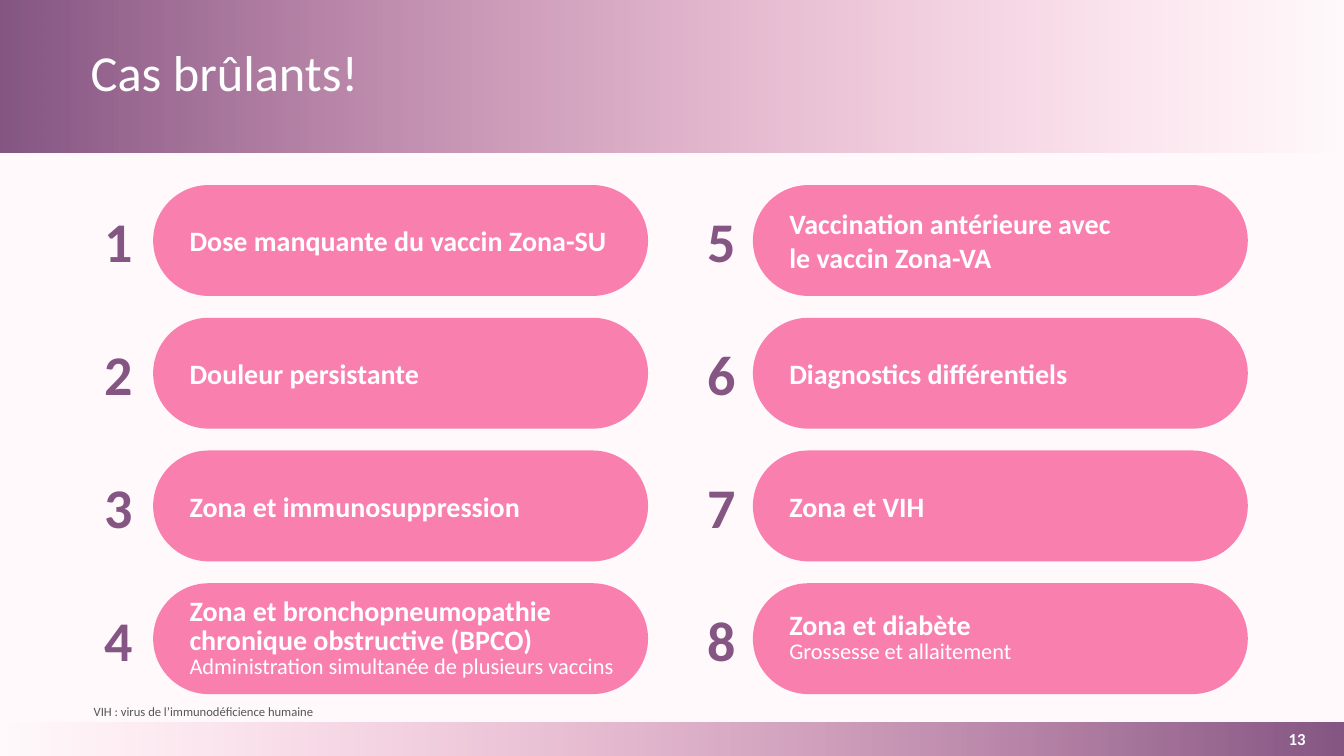
from dataclasses import dataclass
from typing import Any

import pptx
import pptx.dml.color
import pptx.enum.shapes
import pptx.enum.text
import pptx.oxml.ns
import pptx.util
from lxml import etree

Pt = pptx.util.Pt
RGBColor = pptx.dml.color.RGBColor
Align = pptx.enum.text.PP_ALIGN
Anchor = pptx.enum.text.MSO_ANCHOR
Shape = pptx.enum.shapes.MSO_SHAPE

PLUM = RGBColor(0x85, 0x56, 0x83)
PINK = RGBColor(0xF8, 0x7F, 0xAE)
PALE = RGBColor(0xFF, 0xF9, 0xFB)
WHITE = RGBColor(0xFF, 0xFF, 0xFF)
GREY = RGBColor(0x55, 0x55, 0x55)

WIDE, HIGH = 960, 540
TOP, STEP = 132.2, 94.8
CARD_W, CARD_H = 353.5, 79.2
NUM_W, NUM_H = 35.3, 55.4
CARD_X = (109.4, 537.8)
NUM_X = (67, 497.5)
ROWS = 4


@dataclass
class Box:
    left: float
    top: float
    width: float
    height: float

    def size(self) -> list[int]:
        return [Pt(n) for n in (self.left, self.top, self.width, self.height)]


@dataclass
class Line:
    text: str
    size: float
    color: RGBColor = WHITE
    bold: bool = False
    align: Any = Align.LEFT
    space: float = 1.0


@dataclass
class Case:
    head: str
    note: str = ""


CASES = [
    Case("Dose manquante du vaccin Zona-SU"),
    Case("Douleur persistante"),
    Case("Zona et immunosuppression"),
    Case("Zona et bronchopneumopathie\nchronique obstructive (BPCO)",
         "Administration simultanée de plusieurs vaccins"),
    Case("Vaccination antérieure avec\nle vaccin Zona-VA"),
    Case("Diagnostics différentiels"),
    Case("Zona et VIH"),
    Case("Zona et diabète", "Grossesse et allaitement"),
]


def write(frame: Any, lines: list[Line], **style: Any) -> None:
    base = {"word_wrap": True, "vertical_anchor": Anchor.MIDDLE}
    for key, value in (base | style).items():
        setattr(frame, key, value)
    for i, line in enumerate(lines):
        para = frame.add_paragraph() if i else frame.paragraphs[0]
        para.text = line.text
        para.alignment = line.align
        para.line_spacing = line.space
        for run in para.runs:
            look = {"name": "Calibri", "size": Pt(line.size), "bold": line.bold}
            for key, value in look.items():
                setattr(run.font, key, value)
            run.font.color.rgb = line.color


def label(slide: Any, box: Box, line: Line, **style: Any) -> None:
    write(slide.shapes.add_textbox(*box.size()).text_frame, [line], **style)


def plain(slide: Any, kind: Any, box: Box) -> Any:
    shape = slide.shapes.add_shape(kind, *box.size())
    shape.shadow.inherit = False
    shape.line.fill.background()
    return shape


def band(slide: Any, box: Box, angle: int) -> None:
    fill = plain(slide, Shape.RECTANGLE, box).fill
    fill.gradient()
    fill.gradient_angle = angle
    for stop, color in zip(fill.gradient_stops, (PLUM, PINK)):
        stop.color.rgb = color
    tag = pptx.oxml.ns.qn
    last = fill._xPr.findall(".//" + tag("a:srgbClr"))[-1]
    etree.SubElement(last, tag("a:alpha"), val="0")


def card(slide: Any, index: int, case: Case) -> None:
    col, row = divmod(index, ROWS)
    top = TOP + row * STEP
    pill = plain(slide, Shape.ROUNDED_RECTANGLE,
                 Box(CARD_X[col], top, CARD_W, CARD_H))
    pill.adjustments[0] = 0.5
    pill.fill.solid()
    pill.fill.fore_color.rgb = PINK
    space = 0.85 if case.note else 1.0
    lines = [Line(case.head, 20, bold=True, space=space)]
    if case.note:
        lines.append(Line(case.note, 16, space=space))
    write(pill.text_frame, lines, margin_left=Pt(14.4))
    label(slide, Box(NUM_X[col], top + (CARD_H - NUM_H) / 2, NUM_W, NUM_H),
          Line(str(index + 1), 40, PLUM, True, Align.CENTER), word_wrap=False)


def main() -> None:
    deck = pptx.Presentation()
    deck.slide_width, deck.slide_height = Pt(WIDE), Pt(HIGH)
    slide = deck.slides.add_slide(deck.slide_layouts[5])
    back = slide.background.fill
    back.solid()
    back.fore_color.rgb = PALE

    band(slide, Box(0, 516, WIDE, 24), 180)
    band(slide, Box(0, 0, WIDE, 108.7), 0)

    title = slide.shapes.title
    place = Box(57.6, 13, 825.8, 82).size()
    for key, value in zip(("left", "top", "width", "height"), place):
        setattr(title, key, value)
    write(title.text_frame, [Line("Cas brûlants!", 36, space=0.9)])
    slide.shapes._spTree.append(title._element)

    sides = ("left", "top", "right", "bottom")
    label(slide, Box(893, 516, 67, 24),
          Line("13", 12, bold=True, align=Align.CENTER),
          **{"margin_" + side: 0 for side in sides})
    for index, case in enumerate(CASES):
        card(slide, index, case)
    label(slide, Box(59.8, 468.7, 840, 48.2),
          Line("VIH : virus de l’immunodéficience humaine", 9, GREY),
          vertical_anchor=Anchor.BOTTOM)
    deck.save("out.pptx")


if __name__ == "__main__":
    main()
